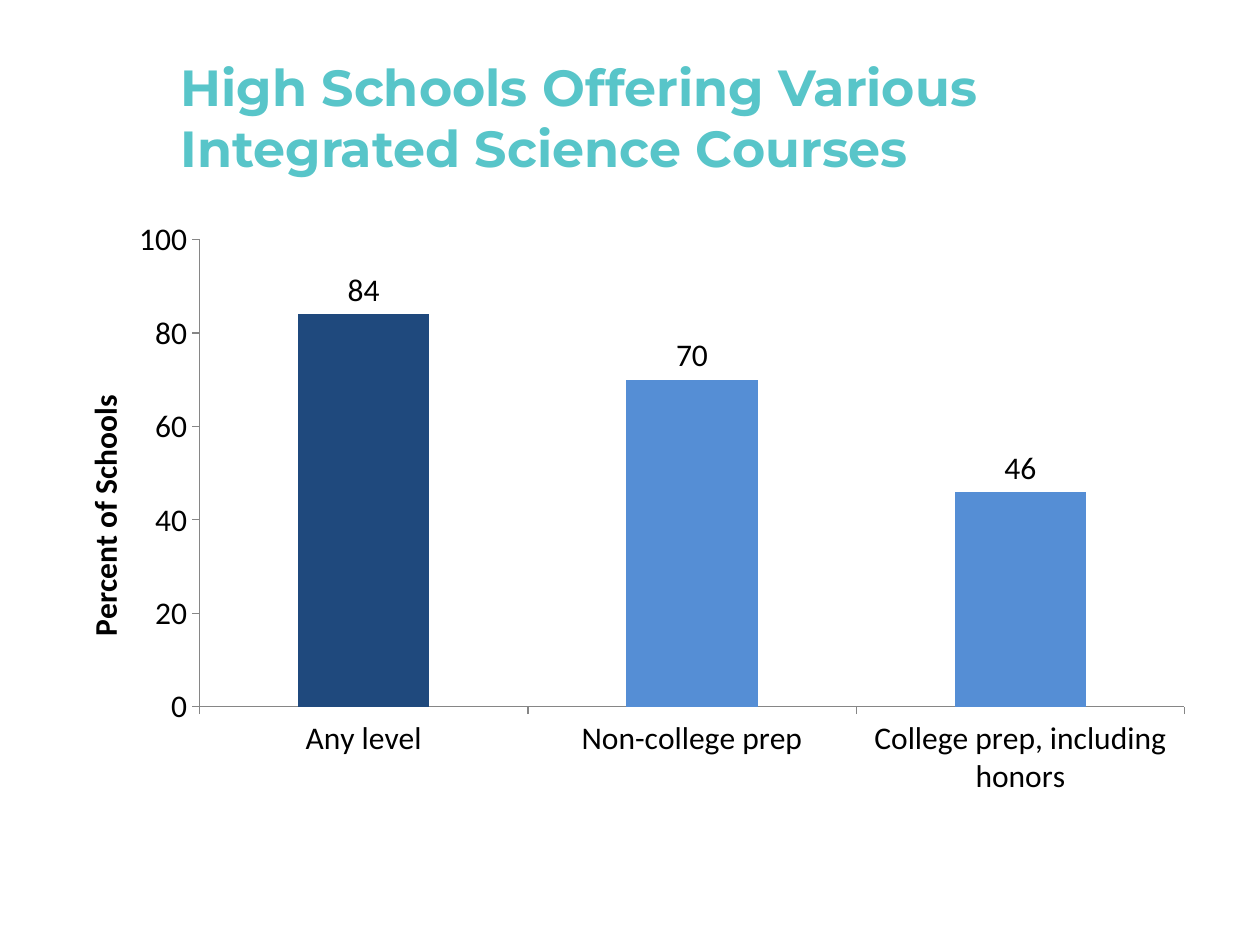
from dataclasses import dataclass

from lxml import etree
from pptx import Presentation
from pptx.chart.data import CategoryChartData
from pptx.dml.color import RGBColor
from pptx.enum import chart as kinds, text
from pptx.oxml.ns import qn
from pptx.util import Cm, Pt


@dataclass(frozen=True)
class Theme:
    teal: str = "58C5C9"
    navy: str = "1F497D"
    blue: str = "558ED5"
    black: str = "000000"
    axis: str = "868686"
    head: str = "Montserrat"
    body: str = "Calibri"
    big: int = 29
    small: int = 18


def rgb(code):
    return RGBColor.from_string(code)


def place(node, index, **spots):
    """Give a chart part a manual layout, as fractions of the chart."""
    for old in node.findall(qn("c:layout")):
        node.remove(old)
    layout = etree.Element(qn("c:layout"))
    node.insert(index, layout)
    manual = etree.SubElement(layout, qn("c:manualLayout"))
    if "w" in spots:
        etree.SubElement(manual, qn("c:layoutTarget")).set("val", "inner")
    for side in "xy":
        etree.SubElement(manual, qn(f"c:{side}Mode")).set("val", "edge")
    for key, value in spots.items():
        etree.SubElement(manual, qn(f"c:{key}")).set("val", str(value))


class Deck:
    def __init__(self, theme, width, height):
        self.theme = theme
        self.prs = Presentation()
        self.prs.slide_width, self.prs.slide_height = Cm(width), Cm(height)
        self.slide = self.prs.slides.add_slide(self.prs.slide_layouts[6])

    def style(self, font, name, size, color, bold=False):
        font.name, font.size, font.bold = name, Pt(size), bold
        font.color.rgb = rgb(color)

    def title(self, words, *box):
        look = self.theme
        frame = self.slide.shapes.add_textbox(*map(Cm, box)).text_frame
        frame.word_wrap = True
        frame.vertical_anchor = text.MSO_ANCHOR.MIDDLE
        frame.text = words
        run = frame.paragraphs[0].runs[0]
        self.style(run.font, look.head, look.big, look.teal, True)

    def axis(self, axis):
        axis.has_major_gridlines = False
        axis.major_tick_mark = kinds.XL_TICK_MARK.OUTSIDE
        axis.minor_tick_mark = kinds.XL_TICK_MARK.NONE
        axis.format.line.color.rgb = rgb(self.theme.axis)
        axis.format.line.width = Pt(0.75)

    def columns(self, name, values, label, *box):
        """Add a column chart whose first column stands out."""
        look = self.theme
        data = CategoryChartData()
        data.categories = list(values)
        data.add_series(name, values.values())
        kind = kinds.XL_CHART_TYPE.COLUMN_CLUSTERED
        chart = self.slide.shapes.add_chart(kind, *map(Cm, box), data).chart
        chart.has_title = chart.has_legend = False
        self.style(chart.font, look.body, look.small, look.black)

        self.axis(chart.category_axis)
        scale = chart.value_axis
        self.axis(scale)
        scale.minimum_scale, scale.maximum_scale = 0, 100
        scale.major_unit = 20
        frame = scale.axis_title.text_frame
        frame.text = label
        run = frame.paragraphs[0].runs[0]
        self.style(run.font, look.body, look.small, look.black, True)

        plot = chart.plots[0]
        plot.gap_width, plot.vary_by_categories = 150, False
        plot.has_data_labels = True
        labels = plot.data_labels
        labels.show_value = True
        labels.position = kinds.XL_LABEL_POSITION.OUTSIDE_END
        self.style(labels.font, look.body, look.small, look.black)
        series = plot.series[0]
        for part, color in ((series, look.blue), (series.points[0], look.navy)):
            part.format.fill.solid()
            part.format.fill.fore_color.rgb = rgb(color)

        area = chart.element.find(".//" + qn("c:plotArea"))
        place(area, 0, x=0.135, y=0.05, w=0.845, h=0.78)
        place(area.find(".//" + qn("c:title")), 1, x=0.03, y=0.3)

    def save(self):
        self.prs.save("out.pptx")


def main():
    deck = Deck(Theme(), 25.4, 19.05)
    shares = {
        "Any level": 84,
        "Non-college prep": 70,
        "College prep, including honors": 46,
    }
    deck.columns("Series 1", shares, "Percent of Schools",
                 0.85, 4.23, 23.5, 12.07)
    deck.title("High Schools Offering Various Integrated Science Courses",
               3.39, 0.76, 20.75, 3.18)
    deck.save()


if __name__ == "__main__":
    main()
